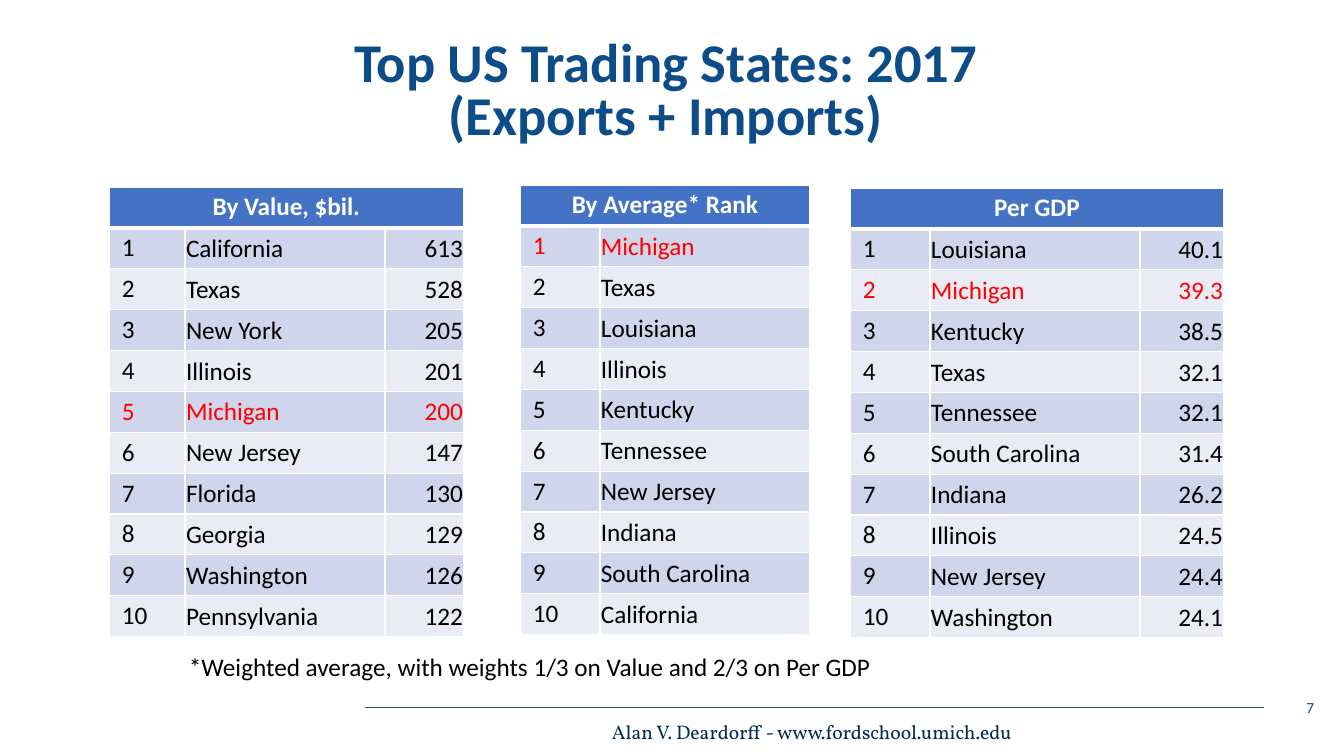
import pptx
import pptx.dml.color
import pptx.enum.shapes
import pptx.enum.text
import pptx.util
from lxml import etree
from pptx.oxml.ns import qn

ALIGN = pptx.enum.text.PP_ALIGN
ANCHOR = pptx.enum.text.MSO_ANCHOR
COLORS = {
    "navy": "0C4C88", "footer": "002F52", "header": "4472C4",
    "odd": "CFD5EA", "even": "E9EBF5", "white": "FFFFFF",
    "black": "000000", "highlight": "FF0000",
}
HIGHLIGHTED = "Michigan"

BY_VALUE = [
    ("California", "613"), ("Texas", "528"), ("New York", "205"),
    ("Illinois", "201"), ("Michigan", "200"), ("New Jersey", "147"),
    ("Florida", "130"), ("Georgia", "129"), ("Washington", "126"),
    ("Pennsylvania", "122"),
]
PER_GDP = [
    ("Louisiana", "40.1"), ("Michigan", "39.3"), ("Kentucky", "38.5"),
    ("Texas", "32.1"), ("Tennessee", "32.1"), ("South Carolina", "31.4"),
    ("Indiana", "26.2"), ("Illinois", "24.5"), ("New Jersey", "24.4"),
    ("Washington", "24.1"),
]
BY_AVERAGE = [
    ("Michigan",), ("Texas",), ("Louisiana",), ("Illinois",), ("Kentucky",),
    ("Tennessee",), ("New Jersey",), ("Indiana",), ("South Carolina",),
    ("California",),
]


def px(length):
    return pptx.util.Emu(round(length * 914400 / 100.8))


def rgb(color):
    return pptx.dml.color.RGBColor.from_string(COLORS[color])


class SlideBuilder:
    def __init__(self, slide, font="Calibri", size=18):
        self.slide = slide
        self.font = font
        self.size = size

    def style_text(self, paragraph, text, color, size=None, font=None, bold=False,
                   align=ALIGN.LEFT):
        paragraph.text = text
        paragraph.alignment = align
        paragraph.font.name = font or self.font
        paragraph.font.size = pptx.util.Pt(size or self.size)
        paragraph.font.bold = bold
        paragraph.font.color.rgb = rgb(color)

    def text(self, left, top, width, height, text, color, anchor=ANCHOR.TOP,
             wrap=True, grow=False, spacing=None, **style):
        box = self.slide.shapes.add_textbox(px(left), px(top), px(width), px(height))
        frame = box.text_frame
        frame.word_wrap = wrap
        frame.vertical_anchor = anchor
        if grow:
            frame.auto_size = pptx.enum.text.MSO_AUTO_SIZE.SHAPE_TO_FIT_TEXT
        self.style_text(frame.paragraphs[0], text, color, **style)
        if spacing:
            frame.paragraphs[0].line_spacing = spacing

    def rule(self, x1, x2, y, color, weight):
        line = self.slide.shapes.add_connector(
            pptx.enum.shapes.MSO_CONNECTOR.STRAIGHT, px(x1), px(y), px(x2), px(y))
        line.line.color.rgb = rgb(color)
        line.line.width = pptx.util.Pt(weight)
        etree.SubElement(line._element.spPr, qn("a:effectLst"))

    def borders(self, cell, top, bottom):
        properties = cell._tc.get_or_add_tcPr()
        weights = {"a:lnL": 1, "a:lnR": 1, "a:lnT": top, "a:lnB": bottom}
        for position, (side, weight) in enumerate(weights.items()):
            line = etree.Element(qn(side), w=str(pptx.util.Pt(weight)))
            fill = etree.SubElement(line, qn("a:solidFill"))
            etree.SubElement(fill, qn("a:srgbClr"), val=COLORS["white"])
            properties.insert(position, line)

    def cell(self, cell, fill, insets, anchor=ANCHOR.TOP, top=1, bottom=1):
        cell.fill.solid()
        cell.fill.fore_color.rgb = rgb(fill)
        cell.margin_left, cell.margin_top, cell.margin_right, cell.margin_bottom = map(px, insets)
        cell.vertical_anchor = anchor
        self.borders(cell, top, bottom)

    def ranking(self, left, top, widths, heading, states):
        table = self.slide.shapes.add_table(
            len(states) + 1, len(widths), px(left), px(top), px(sum(widths)), px(450)).table
        table.first_row = False
        table.horz_banding = False
        for column, width in zip(table.columns, widths):
            column.width = px(width)
        wide, tight = (13, 5, 13, 5), (1, 1, 1, 0)
        for header in table.rows[0].cells:
            self.cell(header, "header", wide, bottom=3)
        table.cell(0, 0).merge(table.cell(0, len(widths) - 1))
        self.style_text(table.cell(0, 0).text_frame.paragraphs[0], heading, "white",
                        bold=True, align=ALIGN.CENTER)
        for rank, state in enumerate(states, 1):
            fill = "odd" if rank % 2 else "even"
            color = "highlight" if state[0] == HIGHLIGHTED else "black"
            for column, text in enumerate((str(rank), *state)):
                cell = table.cell(rank, column)
                self.cell(cell, fill, tight if column else wide,
                          ANCHOR.MIDDLE if column else ANCHOR.TOP, top=3 if rank == 1 else 1)
                self.style_text(cell.text_frame.paragraphs[0], text, color,
                                align=ALIGN.RIGHT if column == 2 else ALIGN.LEFT)


def main():
    presentation = pptx.Presentation()
    presentation.slide_width = px(1344)
    presentation.slide_height = px(756)
    page = SlideBuilder(presentation.slides.add_slide(presentation.slide_layouts[6]))
    page.rule(365, 1264, 707, "navy", 0.5)
    page.text(585, 715, 437, 34, "Alan V. Deardorff - www.fordschool.umich.edu", "footer",
              wrap=False, grow=True, size=14, font="Vollkorn", align=ALIGN.RIGHT)
    page.text(1022, 687, 302, 40, "7", "navy", anchor=ANCHOR.MIDDLE, size=11, align=ALIGN.RIGHT)
    page.text(134, 36, 1064, 124, "Top US Trading States: 2017\n(Exports + Imports)", "navy",
              spacing=0.8, size=39, bold=True, align=ALIGN.CENTER)
    page.ranking(109, 187, (76, 200, 79), "By Value, $bil.", BY_VALUE)
    page.text(179, 646, 1082, 40,
              "*Weighted average, with weights 1/3 on Value and 2/3 on Per GDP", "black", grow=True)
    page.ranking(850, 188, (80, 210, 84), "Per GDP", PER_GDP)
    page.ranking(520, 185, (80, 210), "By Average* Rank", BY_AVERAGE)
    presentation.save("out.pptx")


if __name__ == "__main__":
    main()
